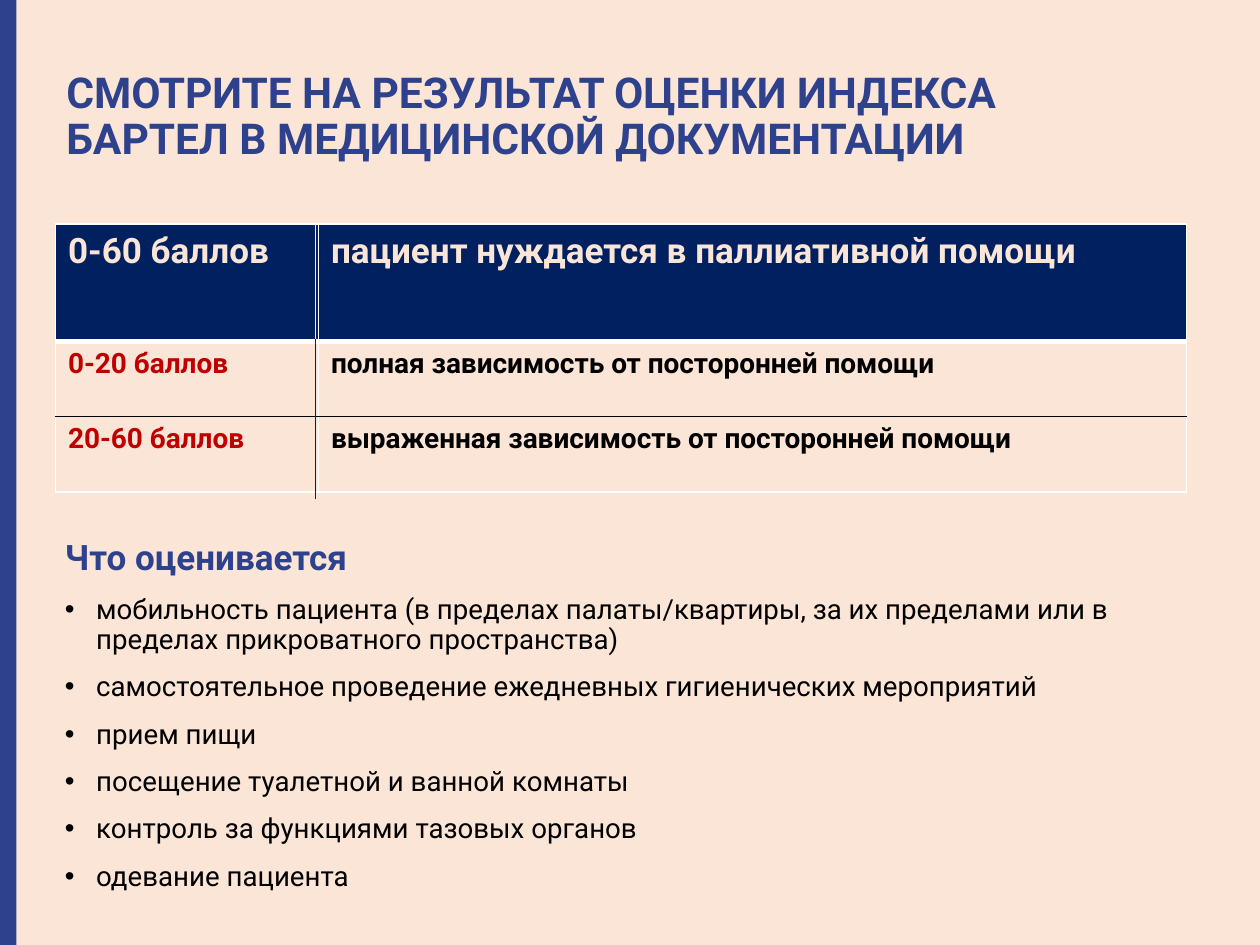
from dataclasses import dataclass
from typing import Any

from lxml.etree import SubElement as add_node
from pptx import Presentation
from pptx.dml.color import RGBColor as Rgb
from pptx.enum.shapes import MSO_CONNECTOR as Connector, MSO_SHAPE as Shape
from pptx.enum.text import MSO_ANCHOR as Anchor
from pptx.oxml.ns import qn
from pptx.util import Cm, Pt

COLORS = {
    "peach": "FBE5D6",
    "blue": "2E418D",
    "navy": "002060",
    "red": "C00000",
    "black": "000000",
    "white": "FFFFFF",
}


@dataclass(frozen=True)
class Style:
    size: float
    color: str
    bold: bool = True


@dataclass(frozen=True)
class ScoreRow:
    score: str
    meaning: str
    height: float
    score_style: Style
    meaning_style: Style
    fill: str | None
    top: tuple[str, float]
    bottom: tuple[str, float]


@dataclass(frozen=True)
class Divider:
    top: float
    bottom: float
    color: str


TITLE = Style(24.3, "blue")
SUBTITLE = Style(20, "blue")
BULLET = Style(15.8, "black", False)
HEADER = Style(20, "peach")
SCORE = Style(16, "red")
MEANING = Style(16, "black")

THIN_WHITE, THICK_WHITE, THIN_BLACK = ("white", 1), ("white", 3), ("black", 1)
ROWS = [
    ScoreRow("0-60 баллов", "пациент нуждается в паллиативной помощи", 2.36,
             HEADER, HEADER, "navy", THIN_WHITE, THICK_WHITE),
    ScoreRow("0-20 баллов", "полная зависимость от посторонней помощи", 1.52,
             SCORE, MEANING, None, THICK_WHITE, THIN_BLACK),
    ScoreRow("20-60 баллов", "выраженная зависимость от посторонней помощи", 1.52,
             SCORE, MEANING, None, THIN_BLACK, THIN_WHITE),
]
COLUMN_WIDTHS = (5.3, 17.5)
TABLE_LEFT, TABLE_TOP = 1.12, 4.52
DIVIDER_LEFT = 6.35
DIVIDERS = [Divider(6.83, 10.06, "navy"), Divider(4.52, 6.83, "peach")]

TITLE_LINES = "СМОТРИТЕ НА РЕЗУЛЬТАТ ОЦЕНКИ ИНДЕКСА\vБАРТЕЛ В МЕДИЦИНСКОЙ ДОКУМЕНТАЦИИ"
CRITERIA = [
    "мобильность пациента (в пределах палаты/квартиры, за их пределами или в "
    "пределах прикроватного пространства)",
    "самостоятельное проведение ежедневных гигиенических мероприятий",
    "прием пищи",
    "посещение туалетной и ванной комнаты",
    "контроль за функциями тазовых органов",
    "одевание пациента",
]


def color_of(name: str) -> Rgb:
    return Rgb.from_string(COLORS[name])


def apply_format(target: Any, values: dict[str, Any]) -> None:
    for name, value in values.items():
        setattr(target, name, value)


def write_text(para: Any, text: str, style: Style) -> None:
    para.text = text
    for span in para.runs:
        apply_format(span.font, {"name": "Roboto", "size": Pt(style.size), "bold": style.bold})
        span.font.color.rgb = color_of(style.color)


def add_text_box(page: Any, left: float, top: float, width: float, height: float,
                 side: float, edge: float) -> Any:
    frame = page.shapes.add_textbox(Cm(left), Cm(top), Cm(width), Cm(height)).text_frame
    apply_format(frame, {
        "word_wrap": True, "vertical_anchor": Anchor.TOP,
        "margin_left": Cm(side), "margin_right": Cm(side),
        "margin_top": Cm(edge), "margin_bottom": Cm(edge),
    })
    return frame


def add_bullet(para: Any) -> None:
    properties = para._p.get_or_add_pPr()
    properties.set("marL", str(Cm(0.63)))
    properties.set("indent", str(-Cm(0.63)))
    add_node(properties, qn("a:buFont"), typeface="Arial")
    add_node(properties, qn("a:buChar"), char="•")


def add_criteria(page: Any) -> None:
    frame = add_text_box(page, 1.12, 10.8, 22.58, 6.43, 0.19, 0.1)
    write_text(frame.paragraphs[0], "Что оценивается", SUBTITLE)
    for text in CRITERIA:
        write_text(frame.add_paragraph(), text, BULLET)
    for para in frame.paragraphs:
        apply_format(para, {"line_spacing": 0.9, "space_before": Pt(10)})
    for para in frame.paragraphs[1:]:
        add_bullet(para)


def add_border(cell: Any, side: str, color: str, width: float) -> None:
    line = add_node(cell._tc.get_or_add_tcPr(), qn(f"a:ln{side}"), w=str(Pt(width)))
    add_node(add_node(line, qn("a:solidFill")), qn("a:srgbClr"), val=COLORS[color])


def fill_cell(cell: Any, text: str, style: Style, row: ScoreRow) -> None:
    write_text(cell.text_frame.paragraphs[0], text, style)
    borders = {"L": THIN_WHITE, "R": THIN_WHITE, "T": row.top, "B": row.bottom}
    for side, (color, width) in borders.items():
        add_border(cell, side, color, width)
    if row.fill:
        cell.fill.solid()
        cell.fill.fore_color.rgb = color_of(row.fill)
    else:
        cell.fill.background()


def add_score_table(page: Any) -> None:
    table = page.shapes.add_table(
        len(ROWS), len(COLUMN_WIDTHS), Cm(TABLE_LEFT), Cm(TABLE_TOP),
        Cm(sum(COLUMN_WIDTHS)), Cm(sum(row.height for row in ROWS))).table
    apply_format(table, {"first_row": False, "horz_banding": False})
    for column, width in zip(table.columns, COLUMN_WIDTHS):
        column.width = Cm(width)
    for index, row in enumerate(ROWS):
        table.rows[index].height = Cm(row.height)
        fill_cell(table.cell(index, 0), row.score, row.score_style, row)
        fill_cell(table.cell(index, 1), row.meaning, row.meaning_style, row)


def add_divider(page: Any, divider: Divider) -> None:
    line = page.shapes.add_connector(
        Connector.STRAIGHT, Cm(DIVIDER_LEFT), Cm(divider.top),
        Cm(DIVIDER_LEFT), Cm(divider.bottom))
    line.line.width = Pt(0.5)
    line.line.color.rgb = color_of(divider.color)
    add_node(line._element.spPr, qn("a:effectLst"))


def add_side_bar(page: Any, height: int) -> None:
    bar = page.shapes.add_shape(Shape.RECTANGLE, 0, 0, Cm(0.33), height)
    bar.shadow.inherit = False
    bar.fill.solid()
    bar.fill.fore_color.rgb = color_of("blue")
    bar.line.fill.background()


def main() -> None:
    deck = Presentation()
    apply_format(deck, {"slide_width": Cm(25.4), "slide_height": Cm(19.05)})
    page = deck.slides.add_slide(deck.slide_layouts[6])
    page.background.fill.solid()
    page.background.fill.fore_color.rgb = color_of("peach")
    add_side_bar(page, deck.slide_height)
    title = add_text_box(page, 1.09, 1.32, 22.8, 2.39, 0.25, 0.13).paragraphs[0]
    write_text(title, TITLE_LINES, TITLE)
    title.line_spacing = 0.9
    add_criteria(page)
    add_score_table(page)
    for divider in DIVIDERS:
        add_divider(page, divider)
    deck.save("out.pptx")


if __name__ == "__main__":
    main()
